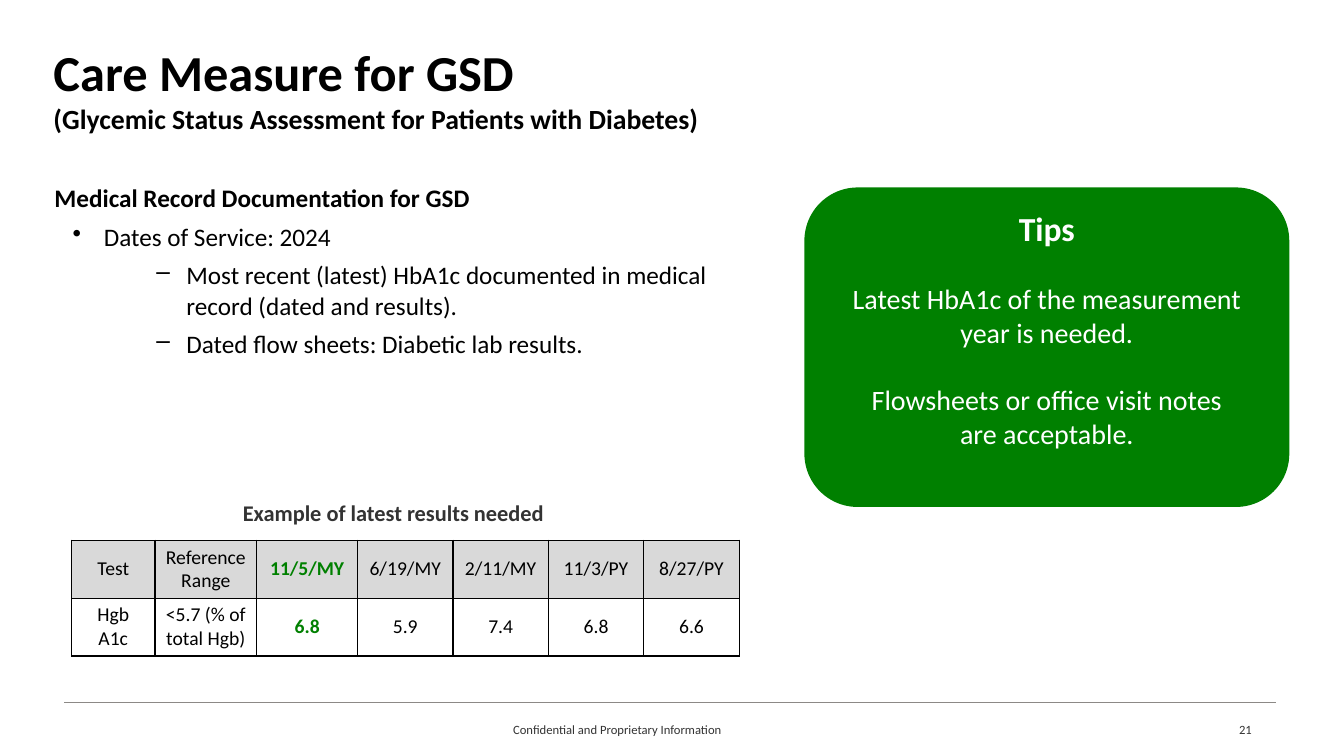
from lxml.etree import SubElement as Sub
from pptx import Presentation
from pptx.dml.color import RGBColor
from pptx.enum.shapes import MSO_CONNECTOR as Link, MSO_SHAPE as Form
from pptx.enum.text import MSO_ANCHOR as Anchor, MSO_AUTO_SIZE as Fit, PP_ALIGN as Align
from pptx.oxml.ns import qn
from pptx.util import Inches, Pt

WIDE, HIGH = Inches(13.333), Inches(7.5)
BLACK, WHITE, GREEN, DARK = "000000", "FFFFFF", "008000", "333333"
COLS = [6.2, 7.58, 7.5] + [7.1] * 4
ROWS = [7.55] * 2
TESTS = [
    ["Test", "Reference Range", "11/5/MY", "6/19/MY", "2/11/MY", "11/3/PY", "8/27/PY"],
    ["Hgb A1c", "<5.7 (% of total Hgb)", "6.8", "5.9", "7.4", "6.8", "6.6"],
]
NOTES = [
    ("Medical Record Documentation for GSD", 0, ""),
    ("Dates of Service: 2024", 0.49, "•"),
    ("Most recent (latest) HbA1c documented in medical record (dated and results).", 1.31, "‒"),
    ("Dated flow sheets: Diabetic lab results.", 1.31, "‒"),
]
TIPS = [
    ("Tips", 24, True),
    ("Latest HbA1c of the measurement year is needed.", 20, False),
    ("Flowsheets or office visit notes\vare acceptable.", 20, False),
]


def wide(part):
    """Turn a percentage of the slide's width into a length."""
    return int(WIDE * part / 100)


def high(part):
    """Turn a percentage of the slide's height into a length."""
    return int(HIGH * part / 100)


def area(x, y, w, h):
    """Turn percentages of the slide into left, top, width and height."""
    return wide(x), high(y), wide(w), high(h)


def paint(item, tone):
    """Give a fill or a font a hex colour."""
    if hasattr(item, "solid"):
        item.solid()
        item.fore_color.rgb = RGBColor.from_string(tone)
    else:
        item.color.rgb = RGBColor.from_string(tone)


def style(para, size, tone=BLACK, bold=False, align=Align.LEFT):
    """Format the runs of a paragraph."""
    para.alignment = align
    for run in para.runs:
        run.font.name = "Calibri"
        run.font.size = Pt(size)
        run.font.bold = bold
        paint(run.font, tone)


def trim(frame):
    """Wrap a frame from its top edge without margins."""
    frame.word_wrap = True
    frame.auto_size = Fit.NONE
    frame.vertical_anchor = Anchor.TOP
    frame.margin_left = frame.margin_right = 0
    frame.margin_top = frame.margin_bottom = 0


def label(slide, spot, text, size, **look):
    """Add a single paragraph of text."""
    frame = slide.shapes.add_textbox(*area(*spot)).text_frame
    trim(frame)
    frame.text = text
    style(frame.paragraphs[0], size, **look)


def head(slide, spot, text):
    """Place the title with its smaller second line."""
    title = slide.shapes.title
    title.left, title.top, title.width, title.height = area(*spot)
    trim(title.text_frame)
    title.text_frame.text = text
    para = title.text_frame.paragraphs[0]
    style(para, 36, bold=True)
    para.runs[1].font.size = Pt(19.8)


def notes(slide, spot):
    """Add the heading and its bulleted points."""
    frame = slide.shapes.add_textbox(*area(*spot)).text_frame
    trim(frame)
    frame.text = "\n".join(text for text, _, _ in NOTES)
    for para, (_, indent, mark) in zip(frame.paragraphs, NOTES):
        if mark:
            props = para._p.get_or_add_pPr()
            props.set("marL", str(Inches(indent)))
            props.set("indent", str(Inches(-0.31)))
            Sub(props, qn("a:buChar"), char=mark)
            para.space_before = Pt(6)
        style(para, 18, bold=not mark)


def card(slide, spot):
    """Add the rounded card of tips."""
    shape = slide.shapes.add_shape(Form.ROUNDED_RECTANGLE, *area(*spot))
    shape.shadow.inherit = False
    paint(shape.fill, GREEN)
    shape.line.fill.background()
    frame = shape.text_frame
    frame.word_wrap = True
    frame.vertical_anchor = Anchor.TOP
    frame.text = "\n".join(text for text, _, _ in TIPS)
    for para, (_, size, bold) in zip(frame.paragraphs, TIPS):
        style(para, size, WHITE, bold, Align.CENTER)
    for para in frame.paragraphs[1:]:
        para.space_before = Pt(24)


def edge(cell):
    """Draw thin black borders around a cell."""
    props = cell._tc.get_or_add_tcPr()
    for place, side in enumerate(("a:lnL", "a:lnR", "a:lnT", "a:lnB")):
        line = props.makeelement(qn(side), {"w": str(Pt(1))})
        Sub(Sub(line, qn("a:solidFill")), qn("a:srgbClr"), val=BLACK)
        props.insert(place, line)


def grid(slide, x, y):
    """Add the table of results with its latest column in green."""
    spot = area(x, y, sum(COLS), sum(ROWS))
    table = slide.shapes.add_table(len(ROWS), len(COLS), *spot).table
    for col, part in zip(table.columns, COLS):
        col.width = wide(part)
    for r, part in enumerate(ROWS):
        table.rows[r].height = high(part)
        for c, text in enumerate(TESTS[r]):
            cell = table.cell(r, c)
            cell.text = text
            cell.vertical_anchor = Anchor.MIDDLE
            paint(cell.fill, WHITE if r else "D9D9D9")
            edge(cell)
            last = c == 2
            style(cell.text_frame.paragraphs[0], 14, GREEN if last else BLACK, last, Align.CENTER)


def rule(slide, left, right, y):
    """Draw the thin line above the footer."""
    line = slide.shapes.add_connector(Link.STRAIGHT, wide(left), high(y), wide(right), high(y))
    line.line.width = Pt(0.5)
    paint(line.line.fill, "8C8986")
    Sub(line._element.spPr, qn("a:effectLst"))


def main():
    """Build the slide and save it."""
    deck = Presentation()
    deck.slide_width, deck.slide_height = WIDE, HIGH
    slide = deck.slides.add_slide(deck.slide_layouts[5])
    rule(slide, 4.8, 94.95, 92.93)
    label(slide, (38.18, 95.47, 28.73, 2.53), "Confidential and Proprietary Information", 9, tone=DARK)
    label(slide, (70.65, 95.47, 22.5, 2.53), "21", 9, tone=DARK, align=Align.RIGHT)
    head(slide, (3.98, 5.47, 90.08, 14.67),
         "Care Measure for GSD\v(Glycemic Status Assessment for Patients with Diabetes)")
    notes(slide, (4.05, 24.13, 50.4, 31.87))
    label(slide, (13.15, 66, 32.25, 3.6), "Example of latest results needed", 16,
          tone=DARK, bold=True, align=Align.CENTER)
    grid(slide, 5.33, 71.47)
    card(slide, (59.85, 24.8, 36.08, 42.27))
    deck.save("out.pptx")


if __name__ == "__main__":
    main()
